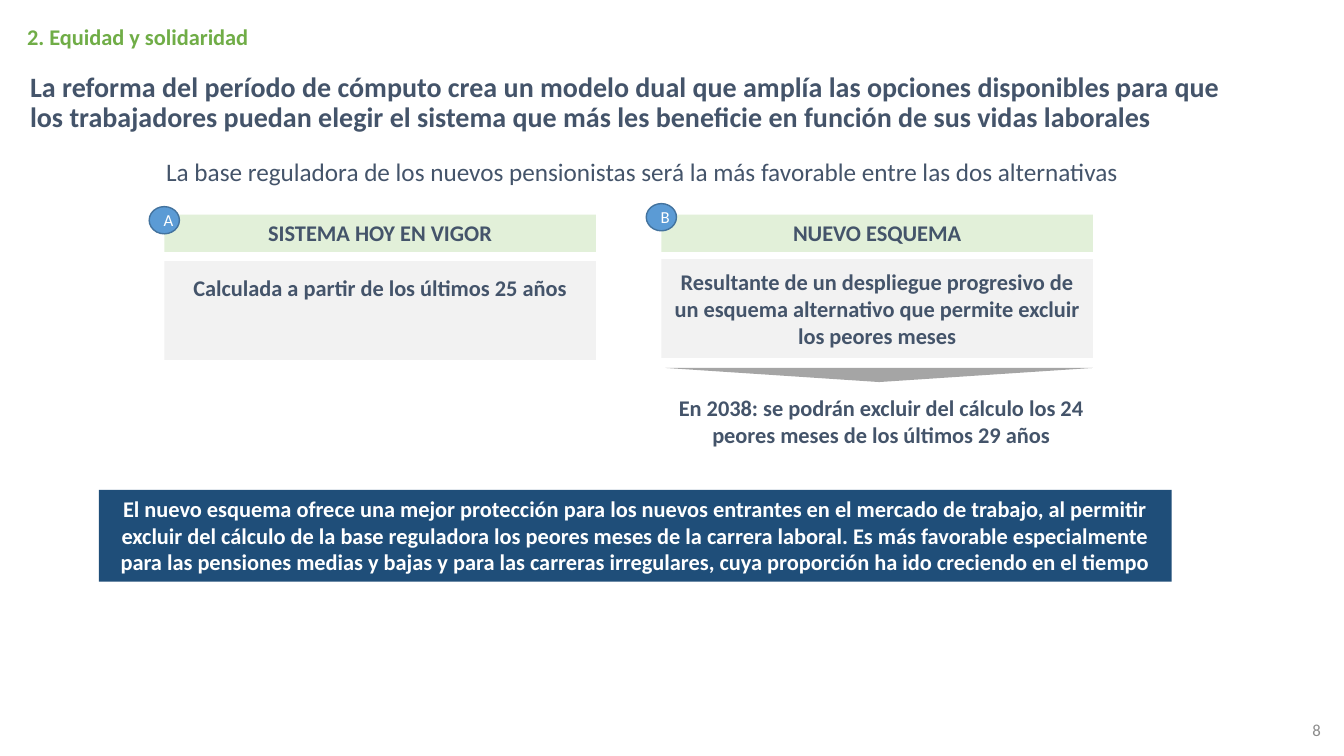
from dataclasses import dataclass

from pptx import Presentation
from pptx.dml.color import RGBColor
from pptx.enum.shapes import MSO_SHAPE
from pptx.enum.text import MSO_ANCHOR, PP_ALIGN
from pptx.shapes.autoshape import Shape
from pptx.slide import Slide
from pptx.util import Inches, Pt

RECT, OVAL, TRIANGLE = MSO_SHAPE.RECTANGLE, MSO_SHAPE.OVAL, MSO_SHAPE.ISOSCELES_TRIANGLE
LEFT, CENTER, RIGHT = PP_ALIGN.LEFT, PP_ALIGN.CENTER, PP_ALIGN.RIGHT
TOP, MIDDLE = MSO_ANCHOR.TOP, MSO_ANCHOR.MIDDLE

SLATE = RGBColor(0x44, 0x54, 0x6A)
GREEN = RGBColor(0x70, 0xAD, 0x47)
PALE_GREEN = RGBColor(0xE2, 0xF0, 0xD9)
PALE_GRAY = RGBColor(0xF2, 0xF2, 0xF2)
ARROW_GRAY = RGBColor(0xA5, 0xA5, 0xA5)
NUMBER_GRAY = RGBColor(0x8C, 0x8C, 0x8C)
NAVY = RGBColor(0x1F, 0x4E, 0x79)
BLUE = RGBColor(0x5B, 0x9B, 0xD5)
BLUE_EDGE = RGBColor(0x43, 0x73, 0x9E)
WHITE = RGBColor(0xFF, 0xFF, 0xFF)

FONT = "Calibri"
COLUMN_WIDTH = 4.28


@dataclass(frozen=True)
class Box:
    left: float
    top: float
    width: float
    height: float


@dataclass(frozen=True)
class Style:
    size: int = 16
    color: RGBColor = SLATE
    bold: bool = True
    align: PP_ALIGN = CENTER
    anchor: MSO_ANCHOR = TOP
    spacing: float = 1.0


@dataclass(frozen=True)
class Scheme:
    letter: str
    heading: str
    detail: str
    left: float
    badge_top: float
    panel_top: float
    detail_top: float
    detail_height: float


SCHEMES = [
    Scheme("A", "SISTEMA HOY EN VIGOR", "Calculada a partir de los últimos 25 años",
           1.63, 2.05, 2.59, 2.67, 0.37),
    Scheme("B", "NUEVO ESQUEMA",
           "Resultante de un despliegue progresivo de un esquema alternativo "
           "que permite excluir los peores meses",
           6.56, 2.02, 2.57, 2.61, 0.91),
]

HEADING = Style()
BADGE = Style(12, WHITE, False, CENTER, MIDDLE)

TEXTS = [
    (Box(0.17, 0.18, 5.74, 0.37), "2. Equidad y solidaridad", Style(color=GREEN, align=LEFT)),
    (Box(0.2, 0.58, 12.24, 0.9),
     "La reforma del período de cómputo crea un modelo dual que amplía las opciones "
     "disponibles para que los trabajadores puedan elegir el sistema que más les "
     "beneficie en función de sus vidas laborales",
     Style(20, align=LEFT, anchor=MIDDLE, spacing=0.9)),
    (Box(1.55, 1.5, 10.67, 0.4),
     "La base reguladora de los nuevos pensionistas será la más favorable entre las "
     "dos alternativas",
     Style(18, bold=False, align=LEFT)),
    (Box(6.6, 3.86, COLUMN_WIDTH, 0.64),
     "En 2038: se podrán excluir del cálculo los 24 peores meses de los últimos 29 años",
     HEADING),
    (Box(10.2, 7.04, 3, 0.4), "8", Style(12, NUMBER_GRAY, False, RIGHT, MIDDLE)),
]

CONCLUSION = (
    "El nuevo esquema ofrece una mejor protección para los nuevos entrantes en el "
    "mercado de trabajo, al permitir excluir del cálculo de la base reguladora los "
    "peores meses de la carrera laboral. Es más favorable especialmente para las "
    "pensiones medias y bajas y para las carreras irregulares, cuya proporción ha "
    "ido creciendo en el tiempo"
)


def write(sp: Shape, text: str, style: Style) -> None:
    tf = sp.text_frame
    tf.word_wrap = True
    tf.vertical_anchor = style.anchor
    p = tf.paragraphs[0]
    p.alignment = style.align
    p.line_spacing = style.spacing
    r = p.add_run()
    r.text = text
    r.font.name = FONT
    r.font.size = Pt(style.size)
    r.font.bold = style.bold
    r.font.color.rgb = style.color


def add_text(s: Slide, box: Box, text: str, style: Style) -> None:
    sp = s.shapes.add_textbox(Inches(box.left), Inches(box.top),
                              Inches(box.width), Inches(box.height))
    write(sp, text, style)


def add_shape(s: Slide, kind: MSO_SHAPE, box: Box, fill: RGBColor) -> Shape:
    sp = s.shapes.add_shape(kind, Inches(box.left), Inches(box.top),
                            Inches(box.width), Inches(box.height))
    sp.shadow.inherit = False
    sp.fill.solid()
    sp.fill.fore_color.rgb = fill
    sp.line.fill.background()
    return sp


def add_scheme(s: Slide, scheme: Scheme) -> None:
    add_shape(s, RECT, Box(scheme.left, scheme.panel_top, COLUMN_WIDTH, 0.98), PALE_GRAY)
    header = add_shape(s, RECT, Box(scheme.left, 2.13, COLUMN_WIDTH, 0.37), PALE_GREEN)
    write(header, scheme.heading, HEADING)
    add_text(s, Box(scheme.left, scheme.detail_top, COLUMN_WIDTH, scheme.detail_height),
             scheme.detail, HEADING)
    badge = add_shape(s, OVAL, Box(scheme.left - 0.15, scheme.badge_top, 0.3, 0.27), BLUE)
    badge.line.color.rgb = BLUE_EDGE
    badge.line.width = Pt(1)
    write(badge, scheme.letter, BADGE)


def main() -> None:
    prs = Presentation()
    prs.slide_width = Inches(13.33)
    prs.slide_height = Inches(7.5)
    s = prs.slides.add_slide(prs.slide_layouts[6])

    for box, text, style in TEXTS:
        add_text(s, box, text, style)
    for scheme in SCHEMES:
        add_scheme(s, scheme)

    arrow = add_shape(s, TRIANGLE, Box(6.6, 3.65, 4.24, 0.14), ARROW_GRAY)
    arrow.rotation = 180
    banner = add_shape(s, RECT, Box(0.98, 4.86, 10.64, 0.91), NAVY)
    write(banner, CONCLUSION, Style(color=WHITE))

    prs.save("out.pptx")


if __name__ == "__main__":
    main()
